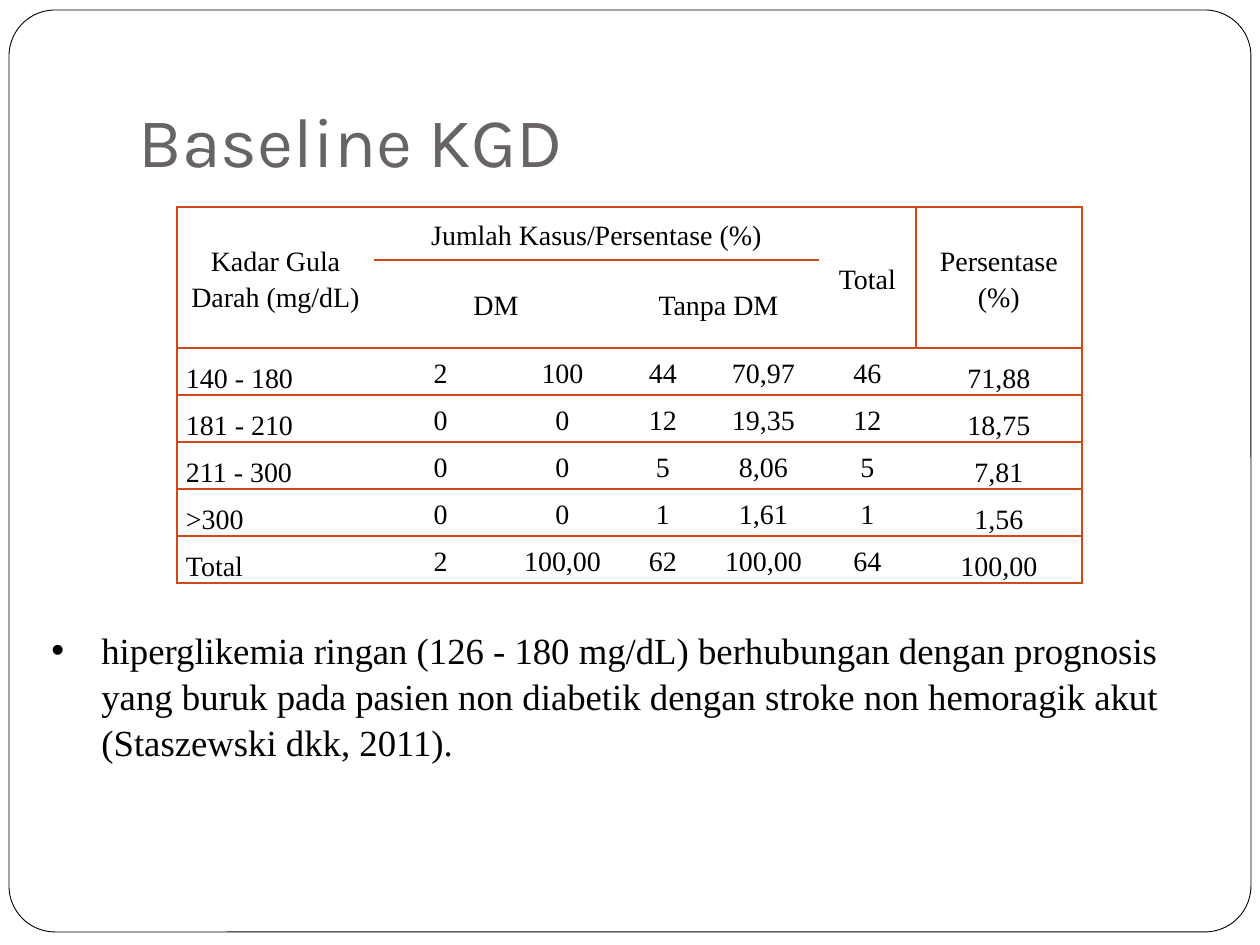
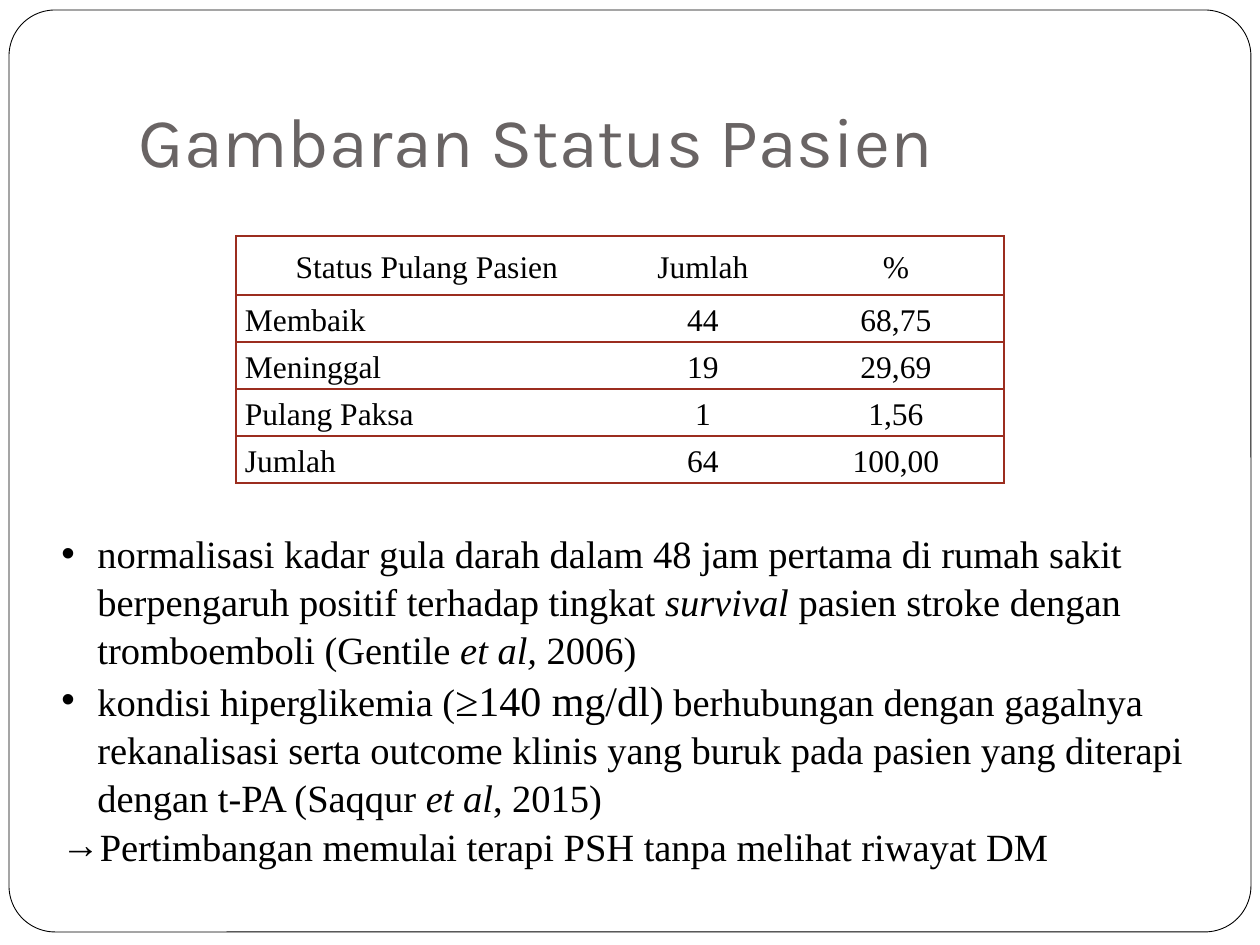
from lxml.etree import Element, SubElement
from pptx import Presentation
from pptx.dml.color import RGBColor
from pptx.enum.shapes import MSO_SHAPE
from pptx.enum.text import MSO_ANCHOR, MSO_AUTO_SIZE, PP_ALIGN
from pptx.oxml.ns import qn
from pptx.util import Pt

EMU_PER_PX = 914400 / 126
BLACK = RGBColor(0x00, 0x00, 0x00)
WHITE = RGBColor(0xFF, 0xFF, 0xFF)
GRAY = RGBColor(0x69, 0x64, 0x64)
ORANGE = RGBColor(0xD3, 0x48, 0x17)
BRICK = RGBColor(0x9B, 0x2D, 0x1F)
TITLE_FONT = "Karla"
BODY_FONT = "Times New Roman"
CELL_MARGIN = 9


def px(length):
    return round(length * EMU_PER_PX)


class Deck:
    def __init__(self):
        self.prs = Presentation()
        self.prs.slide_width, self.prs.slide_height = px(1260), px(945)
        self.slide = None

    def new_slide(self, heading):
        self.slide = self.prs.slides.add_slide(self.prs.slide_layouts[5])
        self.frame()
        self.title(heading)

    def frame(self):
        border = self.slide.shapes.add_shape(
            MSO_SHAPE.ROUNDED_RECTANGLE, px(9), px(10), px(1242), px(922))
        border.adjustments[0] = 0.05
        border.shadow.inherit = False
        border.fill.solid()
        border.fill.fore_color.rgb = WHITE
        border.line.color.rgb = BLACK
        border.line.width = Pt(0.5)
        self.slide.shapes._spTree.insert(2, border._element)

    def title(self, heading):
        holder = self.slide.shapes.title
        holder.left, holder.top = px(126), px(38)
        holder.width, holder.height = px(1071), px(157)
        text = holder.text_frame
        text.text = heading
        text.auto_size = MSO_AUTO_SIZE.NONE
        text.vertical_anchor = MSO_ANCHOR.BOTTOM
        text.margin_left = text.margin_right = text.margin_bottom = px(13)
        text.margin_top = px(6)
        text.paragraphs[0].alignment = PP_ALIGN.LEFT
        self.style(text.paragraphs[0].font, 40, GRAY, TITLE_FONT)

    def style(self, font, size, color=BLACK, name=BODY_FONT):
        font.size, font.name = Pt(size), name
        font.color.rgb = color

    def bullets(self, left, top, width, height, size, indent, points):
        box = self.slide.shapes.add_textbox(px(left), px(top), px(width), px(height))
        text = box.text_frame
        text.word_wrap = True
        text.auto_size = MSO_AUTO_SIZE.SHAPE_TO_FIT_TEXT
        for index, (mark, pieces) in enumerate(points):
            paragraph = text.add_paragraph() if index else text.paragraphs[0]
            props = paragraph._p.get_or_add_pPr()
            props.set("marL", str(px(indent)))
            props.set("indent", str(-px(indent)))
            SubElement(props, qn("a:buFont"), typeface="Arial")
            SubElement(props, qn("a:buChar"), char=mark)
            paragraph.line_spacing = 1.04
            self.style(paragraph.font, size)
            for wording, changes in pieces:
                run = paragraph.add_run()
                run.text = wording
                for attribute, value in changes.items():
                    setattr(run.font, attribute, value)

    def table(self, left, top, widths, heights, rows, size, color,
              spans=(), dividers=(), low_columns=(), header_rows=1):
        grid = self.slide.shapes.add_table(
            len(heights), len(widths), px(left), px(top),
            px(sum(widths)), px(sum(heights))).table
        grid.first_row = grid.horz_banding = False
        for column, width in zip(grid.columns, widths):
            column.width = px(width)
        for row, height in zip(grid.rows, heights):
            row.height = px(height)
        for r1, c1, r2, c2 in spans:
            grid.cell(r1, c1).merge(grid.cell(r2, c2))
        stacked = {c1 for r1, c1, r2, c2 in spans if r2 > r1}
        for r, values in enumerate(rows):
            for c, value in enumerate(values):
                cell = grid.cell(r, c)
                is_body = r >= header_rows
                sides = {
                    "L": c == 0 or (r, c - 1) in dividers,
                    "R": c == len(widths) - 1 or (r, c) in dividers,
                    "T": not (cell.is_spanned and c in stacked),
                    "B": True,
                }
                low = is_body and c in low_columns
                self.cell(cell, value, size,
                          PP_ALIGN.LEFT if is_body and c == 0 else PP_ALIGN.CENTER,
                          MSO_ANCHOR.BOTTOM if low else MSO_ANCHOR.MIDDLE)
                self.borders(cell, sides, color)

    def cell(self, cell, value, size, alignment, anchor):
        cell.margin_left = cell.margin_right = px(CELL_MARGIN)
        cell.margin_top = cell.margin_bottom = 0
        cell.vertical_anchor = anchor
        cell.fill.solid()
        cell.fill.fore_color.rgb = WHITE
        cell.text = value
        paragraph = cell.text_frame.paragraphs[0]
        paragraph.alignment = alignment
        paragraph.line_spacing = 1.15
        self.style(paragraph.font, size)

    def borders(self, cell, sides, color):
        props = cell._tc.get_or_add_tcPr()
        for position, (side, drawn) in enumerate(sides.items()):
            edge = Element(qn(f"a:ln{side}"), w=str(Pt(1)))
            if drawn:
                fill = SubElement(edge, qn("a:solidFill"))
                SubElement(fill, qn("a:srgbClr"), val=str(color))
            else:
                SubElement(edge, qn("a:noFill"))
            props.insert(position, edge)


def glucose_slide(deck):
    deck.new_slide("Baseline KGD")
    rows = [
        ["Kadar Gula Darah (mg/dL)", "Jumlah Kasus/Persentase (%)", "", "", "",
         "Total", "Persentase (%)"],
        ["", "DM", "", "Tanpa DM", "", "", ""],
        ["140 - 180", "2", "100", "44", "70,97", "46", "71,88"],
        ["181 - 210", "0", "0", "12", "19,35", "12", "18,75"],
        ["211 - 300", "0", "0", "5", "8,06", "5", "7,81"],
        [">300", "0", "0", "1", "1,61", "1", "1,56"],
        ["Total", "2", "100,00", "62", "100,00", "64", "100,00"],
    ]
    deck.table(
        177, 207, [197, 133, 111, 90, 111, 97, 166], [53, 88] + [47] * 5,
        rows, 16, ORANGE,
        spans=[(0, 0, 1, 0), (0, 1, 0, 4), (0, 5, 1, 5), (0, 6, 1, 6),
               (1, 1, 1, 2), (1, 3, 1, 4)],
        dividers=[(0, 5), (1, 5)], low_columns=(0, 6), header_rows=2)
    deck.bullets(39, 620, 1191, 102, 21, 50, [
        ("•", [("hiperglikemia ringan (126 - 180 mg/dL) berhubungan dengan prognosis "
                "yang buruk pada pasien non diabetik dengan stroke non hemoragik akut "
                "(Staszewski dkk, 2011).", {})]),
    ])


def status_slide(deck):
    deck.new_slide("Gambaran Status Pasien")
    italic = {"italic": True}
    deck.bullets(49, 522, 1172, 344, 22, 36, [
        ("•", [("normalisasi kadar gula darah dalam 48 jam pertama di rumah sakit "
                "berpengaruh positif terhadap tingkat ", {}),
               ("survival ", italic),
               ("pasien stroke dengan tromboemboli (Gentile ", {}),
               ("et al, ", italic),
               ("2006)", {})]),
        ("•", [("kondisi hiperglikemia (", {}),
               ("≥140 mg/dl)", {"size": Pt(24)}),
               (" berhubungan dengan gagalnya rekanalisasi serta outcome klinis "
                "yang buruk pada pasien yang diterapi dengan t-PA (Saqqur ", {}),
               ("et al", italic),
               (", 2015)", {})]),
        ("→", [("Pertimbangan memulai terapi PSH tanpa melihat riwayat DM", {})]),
    ])
    rows = [
        ["Status Pulang Pasien", "Jumlah", "%"],
        ["Membaik", "44", "68,75"],
        ["Meninggal", "19", "29,69"],
        ["Pulang Paksa", "1", "1,56"],
        ["Jumlah", "64", "100,00"],
    ]
    deck.table(236, 236, [382, 170, 216], [59] + [47] * 4, rows, 18, BRICK)


def main():
    deck = Deck()
    glucose_slide(deck)
    status_slide(deck)
    deck.prs.save("out.pptx")


if __name__ == "__main__":
    main()
